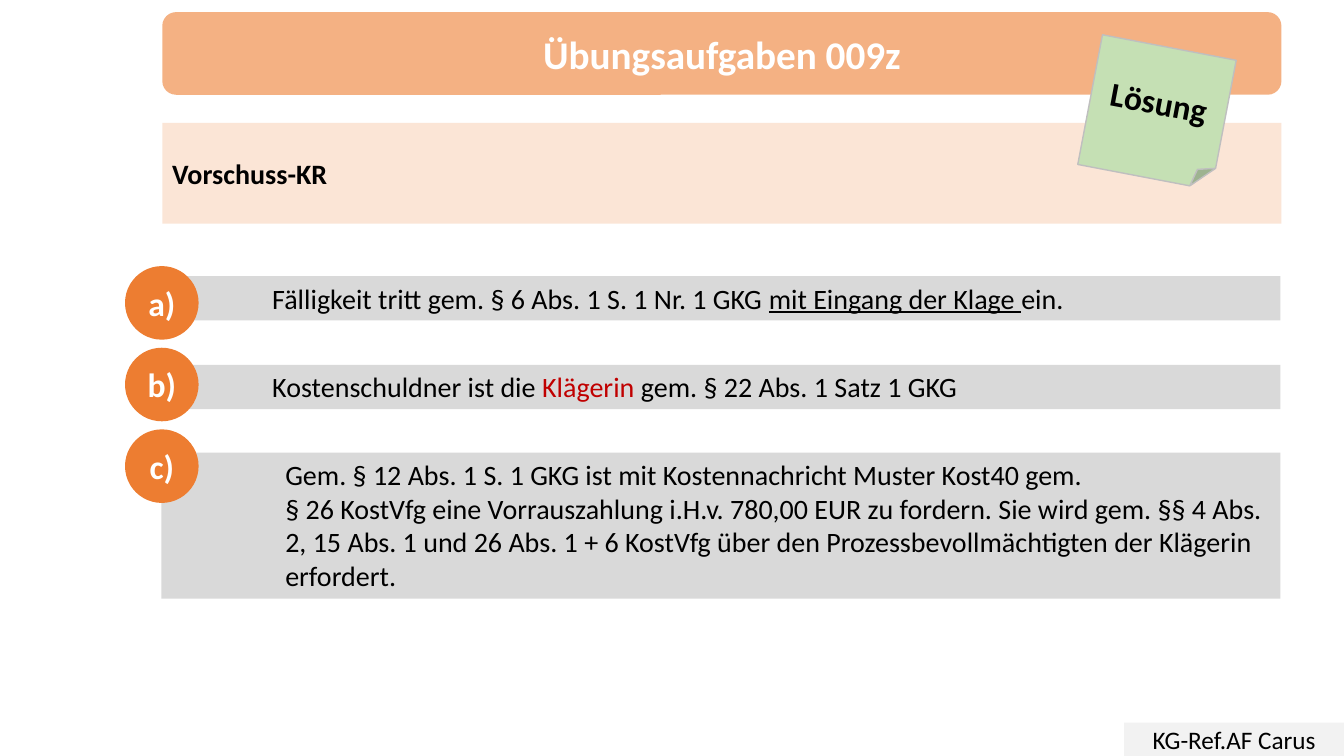
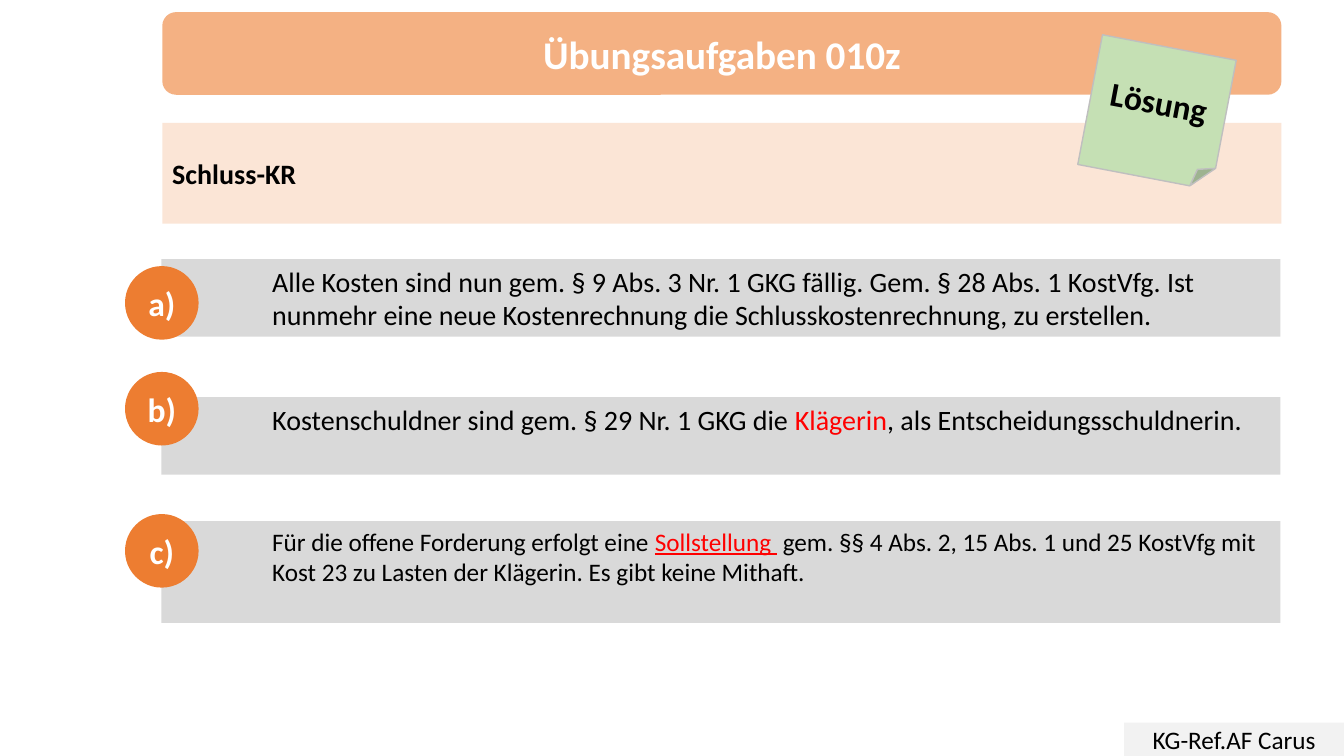
from pptx import Presentation
from pptx.dml.color import RGBColor
from pptx.enum.shapes import MSO_SHAPE
from pptx.enum.text import MSO_ANCHOR, MSO_AUTO_SIZE, PP_ALIGN
from pptx.util import Inches, Pt

FONT = "Calibri"
BLACK, WHITE = "000000", "FFFFFF"
TITLE_FILL, TOPIC_FILL, ANSWER_FILL = "F4B183", "FBE5D6", "D9D9D9"
BADGE_FILL, NOTE_FILL, NOTE_LINE, FOOTER_FILL = "ED7D31", "C5E0B4", "BFBFBF", "F2F2F2"
DARK_RED, RED = "C00000", "FF0000"

BAND_LEFT, BAND_WIDTH = 1.61, 11.1
TITLE_BOX = (BAND_LEFT, 0.12, BAND_WIDTH, 0.82)
TOPIC_BOX = (BAND_LEFT, 1.22, BAND_WIDTH, 1)
NOTE_BOX = (10.8, 0.46, 1.35, 1.31)
FOOTER_BOX = (11.15, 7.17, 2.18, 0.33)
ANSWER_LEFT = 1.6
BADGE_LEFT, BADGE_SIZE = 1.24, 0.73
NOTE_TEXT, FOOTER_TEXT = "Lösung", "KG-Ref.AF Carus"

# Each answer: badge top, bar top, bar height, text indent, text size, paragraphs.
# Each run: text, colour, underline.
SLIDES = [
    ("Übungsaufgaben 009z", "Vorschuss-KR", [
        (2.64, 2.74, 0.44, 1.1, 20, [[
            ("Fälligkeit tritt gem. § 6 Abs. 1 S. 1 Nr. 1 GKG ", BLACK, False),
            ("mit Eingang der Klage ", BLACK, True),
            ("ein.", BLACK, False)]]),
        (3.45, 3.62, 0.44, 1.1, 20, [[
            ("Kostenschuldner ist die ", BLACK, False),
            ("Klägerin", DARK_RED, False),
            (" gem. § 22 Abs. 1 Satz 1 GKG", BLACK, False)]]),
        (4.26, 4.49, 1.45, 1.23, 20, [
            [("Gem. § 12 Abs. 1 S. 1 GKG ist mit Kostennachricht Muster Kost40 gem.",
              BLACK, False)],
            [("§ 26 KostVfg eine Vorrauszahlung i.H.v. 780,00 EUR zu fordern. "
              "Sie wird gem. §§ 4 Abs. 2, 15 Abs. 1 und 26 Abs. 1 + 6 KostVfg über den "
              "Prozessbevollmächtigten der Klägerin erfordert.", BLACK, False)]]),
    ]),
    ("Übungsaufgaben 010z", "Schluss-KR", [
        (2.64, 2.57, 0.77, 1.1, 20, [[
            ("Alle Kosten sind nun gem. § 9 Abs. 3 Nr. 1 GKG fällig. "
             "Gem. § 28 Abs. 1 KostVfg. Ist nunmehr eine neue Kostenrechnung die "
             "Schlusskostenrechnung, zu erstellen.", BLACK, False)]]),
        (3.69, 3.94, 0.77, 1.1, 20, [[
            ("Kostenschuldner sind gem. § 29 Nr. 1 GKG die ", BLACK, False),
            ("Klägerin", RED, False),
            (", als Entscheidungsschuldnerin.", BLACK, False)]]),
        (5.1, 5.17, 1.01, 1.1, 18, [[
            ("Für die offene Forderung erfolgt eine ", BLACK, False),
            ("Sollstellung ", RED, True),
            (" gem. §§ 4 Abs. 2, 15 Abs. 1 und 25 KostVfg mit Kost 23 zu Lasten "
             "der Klägerin. Es gibt keine Mithaft.", BLACK, False)]]),
    ]),
]


def rgb(value):
    return RGBColor.from_string(value)


def add_box(slide, kind, box, fill):
    shape = slide.shapes.add_shape(kind, *map(Inches, box))
    shape.shadow.inherit = False
    shape.fill.solid()
    shape.fill.fore_color.rgb = rgb(fill)
    shape.line.fill.background()
    return shape


def set_label(shape, text, size, color=BLACK, bold=True, align=PP_ALIGN.CENTER):
    frame = shape.text_frame
    frame.text = text
    frame.word_wrap = True
    frame.auto_size = MSO_AUTO_SIZE.NONE
    frame.vertical_anchor = MSO_ANCHOR.MIDDLE
    paragraph = frame.paragraphs[0]
    paragraph.alignment = align
    font = paragraph.font
    font.name, font.size, font.bold = FONT, Pt(size), bold
    font.color.rgb = rgb(color)


def add_title(slide, text):
    add_box(slide, MSO_SHAPE.ROUNDED_RECTANGLE, TITLE_BOX, TITLE_FILL)
    title = slide.shapes.title
    title.left, title.top, title.width, title.height = map(Inches, TITLE_BOX)
    set_label(title, text, 28, WHITE)
    title.element.getparent().append(title.element)  # bring in front of its band


def add_note(slide):
    note = add_box(slide, MSO_SHAPE.FOLDED_CORNER, NOTE_BOX, NOTE_FILL)
    note.line.color.rgb = rgb(NOTE_LINE)
    note.line.width = Pt(1)
    note.rotation = 10.8
    set_label(note, NOTE_TEXT, 24)


def add_answer(slide, letter, badge_top, top, height, indent, size, paragraphs):
    bar = add_box(slide, MSO_SHAPE.RECTANGLE,
                  (ANSWER_LEFT, top, BAND_WIDTH, height), ANSWER_FILL)
    frame = bar.text_frame
    frame.word_wrap = True
    frame.vertical_anchor = MSO_ANCHOR.TOP
    frame.margin_left = Inches(indent)
    for index, runs in enumerate(paragraphs):
        paragraph = frame.add_paragraph() if index else frame.paragraphs[0]
        paragraph.alignment = PP_ALIGN.LEFT
        paragraph.font.name, paragraph.font.size = FONT, Pt(size)
        for text, color, underline in runs:
            run = paragraph.add_run()
            run.text = text
            run.font.color.rgb = rgb(color)
            if underline:
                run.font.underline = True
    badge = add_box(slide, MSO_SHAPE.FLOWCHART_CONNECTOR,
                    (BADGE_LEFT, badge_top, BADGE_SIZE, BADGE_SIZE), BADGE_FILL)
    set_label(badge, f"{letter})", 24, WHITE)


def add_exercise(presentation, title, topic, answers):
    slide = presentation.slides.add_slide(presentation.slide_layouts[5])
    add_title(slide, title)
    band = add_box(slide, MSO_SHAPE.RECTANGLE, TOPIC_BOX, TOPIC_FILL)
    set_label(band, topic, 20, align=PP_ALIGN.LEFT)
    add_note(slide)
    for letter, answer in zip("abc", answers):
        add_answer(slide, letter, *answer)
    footer = add_box(slide, MSO_SHAPE.RECTANGLE, FOOTER_BOX, FOOTER_FILL)
    set_label(footer, FOOTER_TEXT, 18, bold=False)


def main():
    presentation = Presentation()
    presentation.slide_width = Inches(13.33)
    presentation.slide_height = Inches(7.5)
    for title, topic, answers in SLIDES:
        add_exercise(presentation, title, topic, answers)
    presentation.save("out.pptx")


if __name__ == "__main__":
    main()
